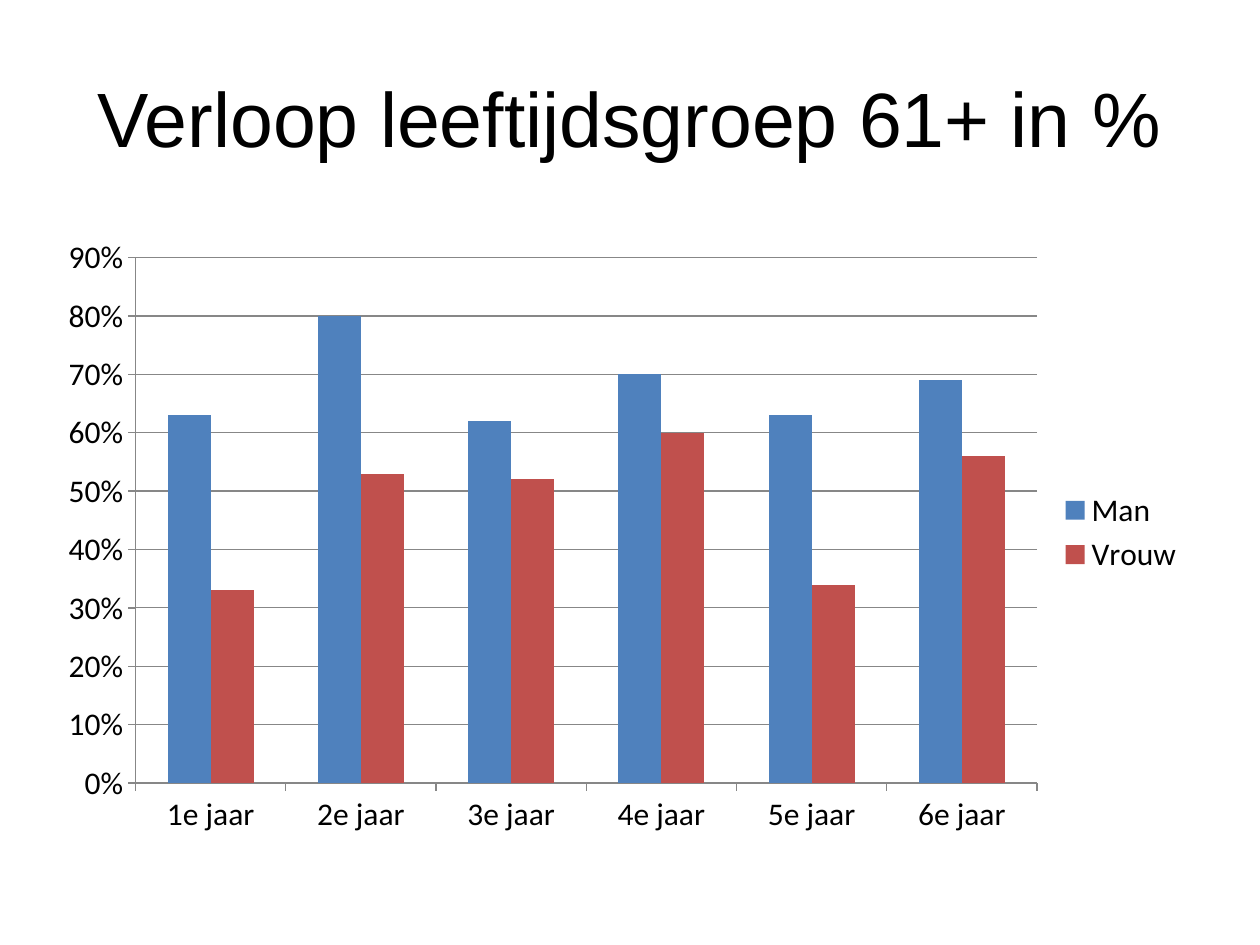
from typing import NamedTuple

from lxml import etree
from pptx import Presentation, util as u
from pptx.chart.data import CategoryChartData
from pptx.dml.color import RGBColor
from pptx.enum import chart as ch, text
from pptx.oxml.ns import qn


class Series(NamedTuple):
    name: str
    values: tuple[float, ...]
    color: str


class Box(NamedTuple):
    left: float
    top: float
    width: float
    height: float

    def lengths(self) -> list[u.Length]:
        return [u.Cm(v) for v in self]


BLACK, GREY = "000000", "878787"
TITLE_BOX = Box(1.27, 0.76, 22.86, 3.18)
CHART_BOX = Box(1.27, 4.45, 22.86, 12.57)
PLOT = {"x": 0.064, "y": 0.059, "w": 0.795, "h": 0.843}
YEARS = [f"{n}e jaar" for n in range(1, 7)]
SERIES = [
    Series("Man", (0.63, 0.8, 0.62, 0.7, 0.63, 0.69), "4F81BD"),
    Series("Vrouw", (0.33, 0.53, 0.52, 0.6, 0.34, 0.56), "C0504D"),
]


def rgb(color: str) -> RGBColor:
    return RGBColor.from_string(color)


def set_attrs(obj, formats: dict) -> None:
    for name, value in formats.items():
        setattr(obj, name, value)


def set_font(font, name: str, size: float) -> None:
    set_attrs(font, {"name": name, "size": u.Pt(size), "bold": False})
    font.color.rgb = rgb(BLACK)


def set_line(line) -> None:
    line.color.rgb = rgb(GREY)
    line.width = u.Pt(0.75)


def set_plot_layout(chart) -> None:
    """Fix the inner plot area as fractions of the chart."""
    area = chart._chartSpace.chart.plotArea
    for old in area.findall(qn("c:layout")):
        area.remove(old)
    layout = etree.Element(qn("c:layout"))
    area.insert(0, layout)
    manual = etree.SubElement(layout, qn("c:manualLayout"))
    settings = {"layoutTarget": "inner", "xMode": "edge", "yMode": "edge", **PLOT}
    for tag, value in settings.items():
        etree.SubElement(manual, qn(f"c:{tag}")).set("val", str(value))


def add_title(slide, title: str) -> None:
    sp = slide.shapes.title
    set_attrs(sp, dict(zip(Box._fields, TITLE_BOX.lengths())))
    tf = sp.text_frame
    set_attrs(tf, {"text": title, "word_wrap": True,
                   "vertical_anchor": text.MSO_ANCHOR.MIDDLE})
    p = tf.paragraphs[0]
    p.alignment = text.PP_ALIGN.CENTER
    set_font(p.runs[0].font, "Arial", 44)


def add_column_chart(slide) -> None:
    data = CategoryChartData(number_format="0%")
    data.categories = YEARS
    for s in SERIES:
        data.add_series(s.name, s.values)
    chart = slide.shapes.add_chart(
        ch.XL_CHART_TYPE.COLUMN_CLUSTERED, *CHART_BOX.lengths(), data).chart
    set_attrs(chart, {"has_title": False, "has_legend": True})
    set_font(chart.font, "Calibri", 18)
    set_attrs(chart.legend, {"position": ch.XL_LEGEND_POSITION.RIGHT,
                             "include_in_layout": False})

    plot = chart.plots[0]
    set_attrs(plot, {"gap_width": 150, "overlap": 0, "vary_by_categories": False})
    for series, s in zip(plot.series, SERIES):
        series.invert_if_negative = False
        series.format.fill.solid()
        series.format.fill.fore_color.rgb = rgb(s.color)

    for axis in (chart.category_axis, chart.value_axis):
        axis.major_tick_mark = ch.XL_TICK_MARK.OUTSIDE
        axis.minor_tick_mark = ch.XL_TICK_MARK.NONE
        set_line(axis.format.line)
    axis = chart.value_axis
    set_attrs(axis, {"minimum_scale": 0, "maximum_scale": 0.9, "major_unit": 0.1,
                     "has_major_gridlines": True})
    set_attrs(axis.tick_labels, {"number_format": "0%",
                                 "number_format_is_linked": False})
    set_line(axis.major_gridlines.format.line)
    set_plot_layout(chart)


def main() -> None:
    prs = Presentation()
    set_attrs(prs, {"slide_width": u.Cm(25.4), "slide_height": u.Cm(19.05)})
    slide = prs.slides.add_slide(prs.slide_layouts.get_by_name("Title Only"))
    add_title(slide, "Verloop leeftijdsgroep 61+ in %")
    add_column_chart(slide)
    prs.save("out.pptx")


if __name__ == "__main__":
    main()
